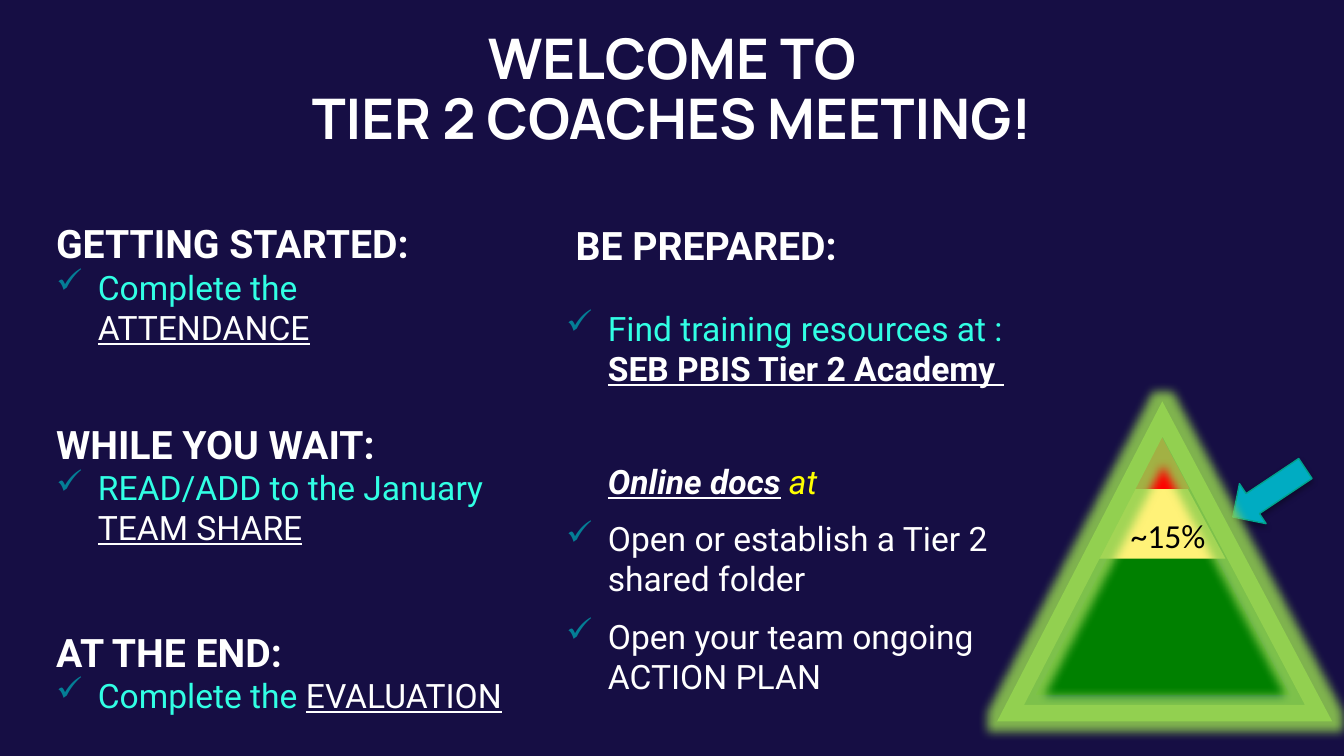
from dataclasses import dataclass

from lxml import etree
from pptx import Presentation
from pptx import util as u
from pptx.dml.color import RGBColor
from pptx.enum import shapes, text
from pptx.oxml.ns import qn


@dataclass(frozen=True)
class Theme:
    background: str = "160E44"
    white: str = "FFFFFF"
    black: str = "000000"
    aqua: str = "31FFE4"
    yellow: str = "FFFF00"
    check: str = "047E95"
    arrow: str = "00ACC2"
    arrow_line: str = "00A38E"
    base: str = "008000"
    base_line: str = "097233"
    middle: str = "FFF278"
    top: str = "FF0000"
    frame: str = "92D050"
    title_font: str = "Manrope"
    body_font: str = "Roboto"
    label_font: str = "Calibri"
    title_size: float = 30
    heading_size: float = 21
    body_size: float = 18


THEME = Theme()
INDENT = 0.79


def rgb(value):
    return RGBColor.from_string(value)


def lengths(box):
    return [u.Cm(value) for value in box]


def add_element(parent, tag, **attributes):
    return etree.SubElement(parent, qn(tag), attributes)


def style_run(run, size, color, font=THEME.body_font, bold=False, italic=False, underline=False):
    run.font.name, run.font.size = font, u.Pt(size)
    run.font.color.rgb = rgb(color)
    run.font.bold, run.font.italic, run.font.underline = bold, italic, underline


def set_indent(paragraph, left, first=0):
    properties = paragraph._p.get_or_add_pPr()
    properties.set("marL", str(u.Cm(left)))
    properties.set("indent", str(u.Cm(first)))
    return properties


def add_check(paragraph):
    properties = set_indent(paragraph, INDENT, -INDENT)
    add_element(add_element(properties, "a:buClr"), "a:srgbClr", val=THEME.check)
    add_element(properties, "a:buChar", char="✓")


def add_effect(shape, tag, color, opacity, **attributes):
    effects = shape._element.spPr.find(qn("a:effectLst"))
    effect = add_element(effects, tag, **attributes)
    tint = add_element(effect, "a:srgbClr", val=color)
    add_element(tint, "a:alpha", val=str(opacity * 1000))


def add_title(slide, box):
    title = slide.shapes.title
    title.left, title.top, title.width, title.height = lengths(box)
    frame = title.text_frame
    frame.text = "WELCOME TO\vTIER 2 COACHES MEETING!"
    frame.auto_size = text.MSO_AUTO_SIZE.NONE
    frame.vertical_anchor = text.MSO_ANCHOR.TOP
    frame.margin_left = frame.margin_right = frame.margin_top = frame.margin_bottom = u.Cm(0.25)
    paragraph = frame.paragraphs[0]
    paragraph.alignment = text.PP_ALIGN.CENTER
    paragraph.line_spacing = 0.9
    for run in paragraph.runs:
        style_run(run, THEME.title_size, THEME.white, THEME.title_font, bold=True)


def add_column(slide, box, margin, lines):
    frame = slide.shapes.add_textbox(*lengths(box)).text_frame
    frame.word_wrap = True
    frame.vertical_anchor = text.MSO_ANCHOR.BOTTOM
    frame.margin_left = frame.margin_right = frame.margin_top = frame.margin_bottom = u.Cm(margin)
    for index, (kind, before, after, runs) in enumerate(lines):
        paragraph = frame.add_paragraph() if index else frame.paragraphs[0]
        paragraph.space_before, paragraph.space_after = u.Pt(before), u.Pt(after)
        if kind == "check":
            add_check(paragraph)
        elif kind == "plain":
            set_indent(paragraph, INDENT)
        size = THEME.heading_size if kind == "heading" else THEME.body_size
        for words, color, options in runs:
            run = paragraph.add_run()
            run.text = words
            style_run(run, size, color, **options)
    return frame


def heading(words, before=0, after=0):
    return "heading", before, after, [(words, THEME.white, {"bold": True})]


def check(*runs):
    return "check", 0, 9, runs


def add_agenda(slide, box):
    linked = {"underline": True}
    add_column(slide, box, 0.25, [
        heading("GETTING STARTED:"),
        check(("Complete the ", THEME.aqua, {}), ("ATTENDANCE", THEME.white, linked)),
        heading("WHILE YOU WAIT:", before=30),
        check(("READ/ADD to the January ", THEME.aqua, {}), ("TEAM SHARE", THEME.white, linked)),
        heading("AT THE END:", before=34),
        check(("Complete the ", THEME.aqua, {}), ("EVALUATION", THEME.white, linked)),
    ])


def add_preparation(slide, box):
    linked = {"bold": True, "underline": True}
    frame = add_column(slide, box, 0.18, [
        heading("BE PREPARED:", after=21),
        check(("Find training resources at : ", THEME.aqua, {}),
              ("SEB PBIS Tier 2 Academy ", THEME.white, linked)),
        ("plain", 30, 9, [("Online docs", THEME.white, {**linked, "italic": True}),
                          (" at", THEME.yellow, {"italic": True})]),
        check(("Open or establish a Tier 2 shared folder", THEME.white, {})),
        check(("Open your team ongoing ACTION PLAN", THEME.white, {})),
    ])
    set_indent(frame.paragraphs[0], 0.18)


def add_triangle(group, box, fill=None, line=None, width=0):
    triangle = group.shapes.add_shape(shapes.MSO_SHAPE.ISOSCELES_TRIANGLE, *lengths(box))
    triangle.adjustments[0] = 0.493
    triangle.shadow.inherit = False
    if fill:
        triangle.fill.solid()
        triangle.fill.fore_color.rgb = rgb(fill)
    else:
        triangle.fill.background()
    if line:
        triangle.line.color.rgb = rgb(line)
        triangle.line.width = u.Pt(width)
        add_element(triangle.line._get_or_add_ln(), "a:miter", lim="800000")
    else:
        triangle.line.fill.background()
    return triangle


def add_pyramid(slide, box):
    left, top, width, height = box
    group = slide.shapes.add_group_shape()
    add_triangle(group, (left + 0.15, top + 0.28, 5.46, 5.13), THEME.base, THEME.base_line, 11)
    add_triangle(group, (left + 1.65, top + 0.38, 2.41, 2.26), THEME.middle)
    add_triangle(group, (left + 2.34, top + 0.33, 1.04, 0.99), THEME.top)
    frame = add_triangle(group, box, line=THEME.frame, width=8.75)
    add_effect(frame, "a:glow", THEME.frame, 85, rad=str(u.Pt(11)))
    label = group.shapes.add_textbox(*lengths((left + 1.96, top + 1.68, 2.03, 1.02)))
    label.text_frame.word_wrap = True
    label.text_frame.text = "~15%"
    paragraph = label.text_frame.paragraphs[0]
    paragraph.alignment = text.PP_ALIGN.CENTER
    style_run(paragraph.runs[0], THEME.body_size, THEME.black, THEME.label_font)


def add_pointer(slide, box):
    arrow = slide.shapes.add_shape(shapes.MSO_SHAPE.LEFT_ARROW, *lengths(box))
    arrow.rotation = 326.3
    arrow.fill.solid()
    arrow.fill.fore_color.rgb = rgb(THEME.arrow)
    arrow.line.color.rgb = rgb(THEME.arrow_line)
    arrow.line.width = u.Pt(0.75)
    arrow.shadow.inherit = False
    add_effect(arrow, "a:outerShdw", THEME.black, 35, blurRad=str(u.Pt(3.1)),
               dist=str(u.Pt(1.8)), dir="5400000", rotWithShape="0")


def main():
    presentation = Presentation()
    presentation.slide_width, presentation.slide_height = u.Cm(25.4), u.Cm(14.29)
    slide = presentation.slides.add_slide(presentation.slide_layouts[5])
    slide.background.fill.solid()
    slide.background.fill.fore_color.rgb = rgb(THEME.background)
    add_title(slide, (1.9, 0.33, 21.6, 2.84))
    add_agenda(slide, (0.81, 3.18, 9.12, 10.59))
    add_pointer(slide, (23.16, 8.86, 1.65, 0.91))
    add_pyramid(slide, (19.1, 7.92, 5.82, 5.56))
    add_preparation(slide, (10.52, 4.22, 9.32, 9.12))
    presentation.save("out.pptx")


if __name__ == "__main__":
    main()
